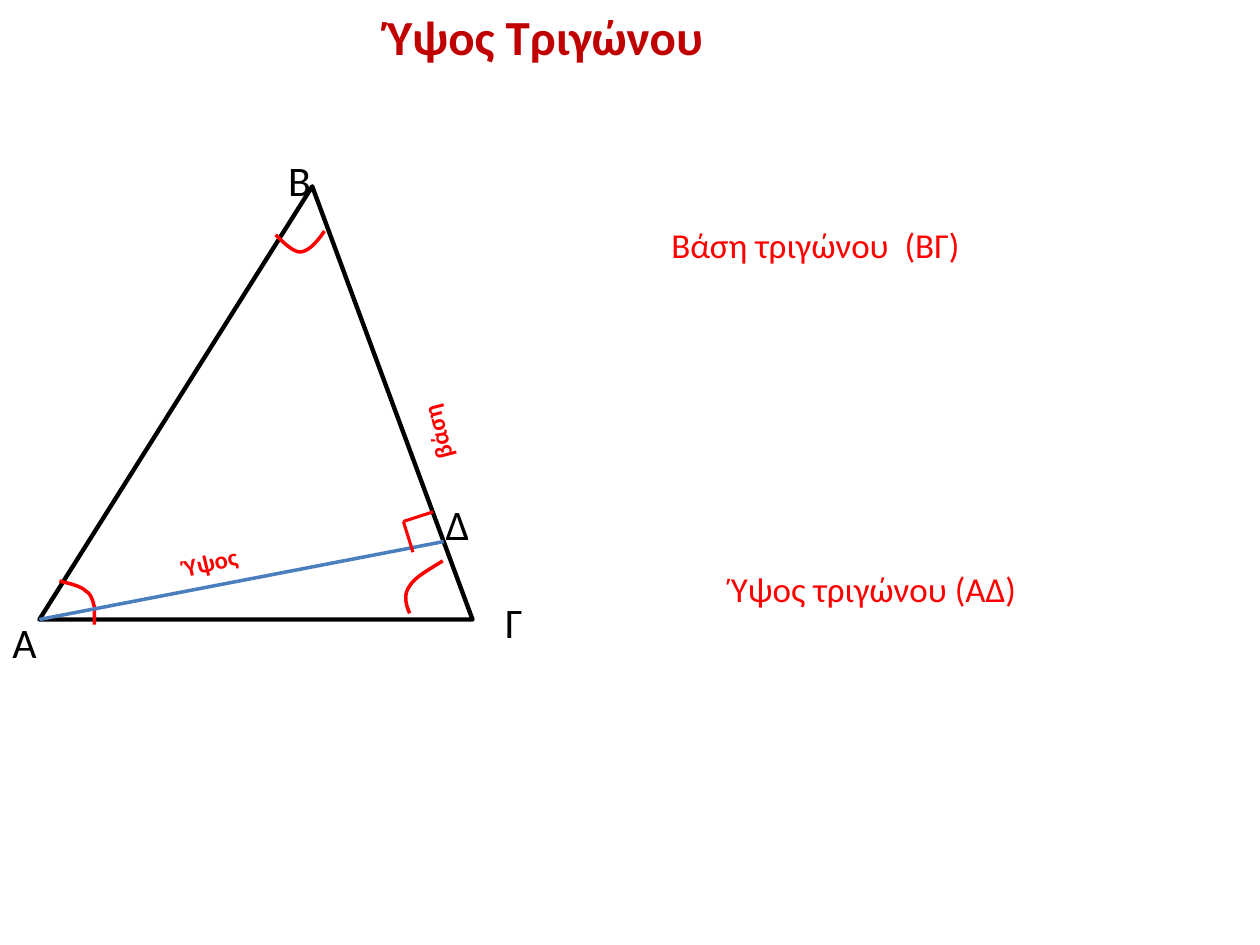
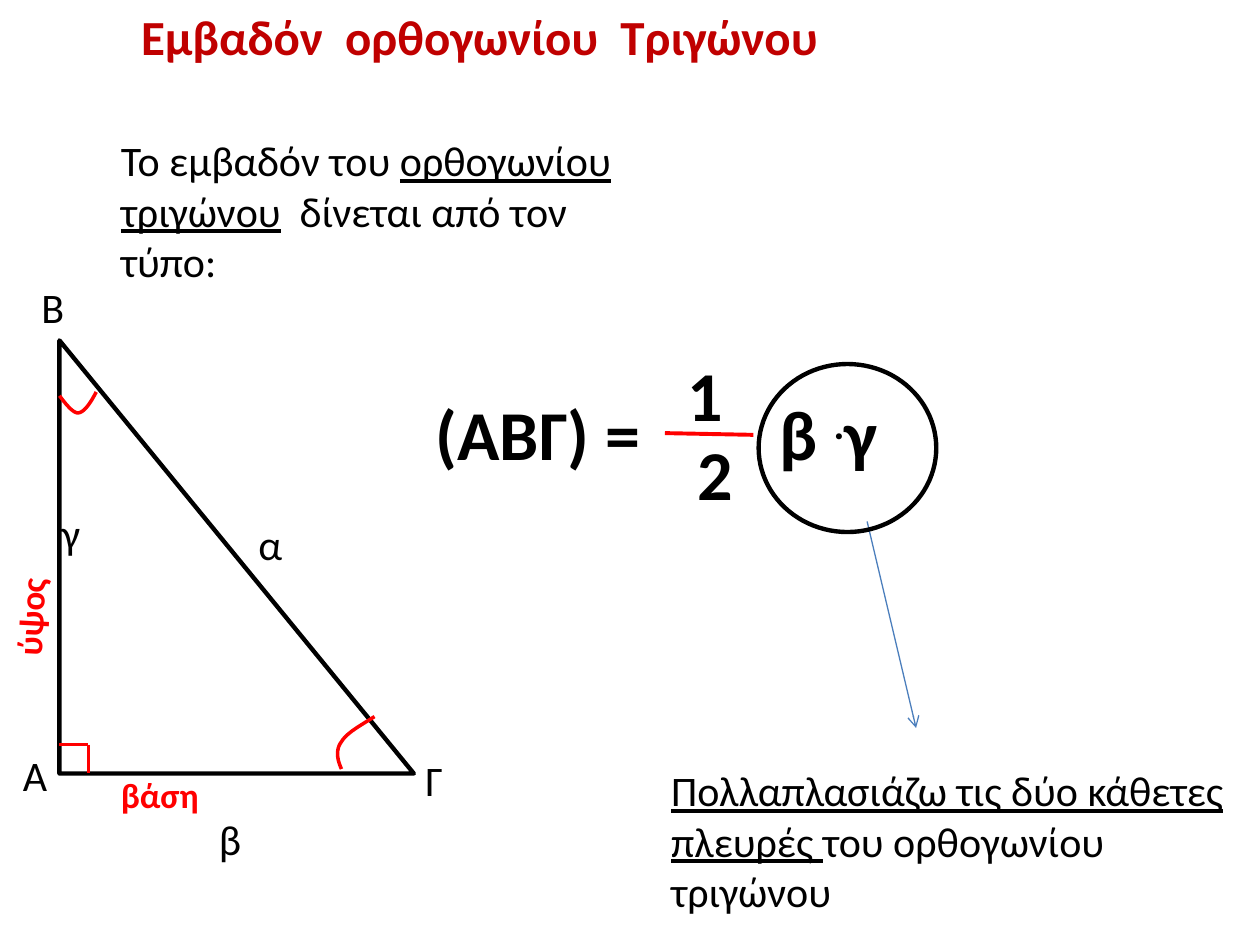
from lxml.etree import SubElement
from pptx import Presentation
from pptx.dml.color import RGBColor
from pptx.enum.shapes import MSO_CONNECTOR, MSO_SHAPE
from pptx.enum.text import MSO_AUTO_SIZE
from pptx.oxml.ns import qn
from pptx.util import Pt

COLORS = {"ink": "000000", "red": "FF0000", "title": "C00000", "blue": "4B7EBC"}
FONT = "Calibri"
APEX_ARC = [(0, 0.18), (0.18, 0.59), (0.36, 1), (0.51, 1),
            (0.69, 0.95), (0.85, 0.5), (1, 0)]
RIGHT_ARC = [(0.16, 1), (0.06, 0.83), (0, 0.64), (0.16, 0.48),
             (0.29, 0.31), (0.65, 0.17), (1, 0)]
LEFT_ARC = [(0, 0), (0.28, 0.06), (0.6, 0.11), (0.75, 0.23), (0.93, 0.31),
            (0.96, 0.49), (1, 0.6), (1, 0.74), (1, 0.89), (1, 1)]


def color(name):
    return RGBColor.from_string(COLORS[name])


def style_line(shape, name, weight):
    shape.line.color.rgb = color(name)
    shape.line.width = Pt(weight)


def add_text(slide, left, top, width, runs, size=24, ink="ink", bold=False,
             rotation=0, lines=1, wrap=True):
    height = 1.2 * size * lines + 7.2
    box = slide.shapes.add_textbox(Pt(left), Pt(top), Pt(width), Pt(height))
    box.rotation = rotation
    frame = box.text_frame
    frame.word_wrap = wrap
    frame.auto_size = MSO_AUTO_SIZE.SHAPE_TO_FIT_TEXT
    paragraph = frame.paragraphs[0]
    paragraph.font.name = FONT
    paragraph.font.size = Pt(size)
    paragraph.font.bold = bold
    paragraph.font.color.rgb = color(ink)
    for text, mark in [(runs, None)] if isinstance(runs, str) else runs:
        run = paragraph.add_run()
        run.text = text
        if mark == "underline":
            run.font.underline = True
        elif mark == "raised":
            run.font._element.set("baseline", "30000")


def add_title(slide, left, width, text):
    add_text(slide, left, 0, width, text, size=28, ink="title", bold=True)


def add_vertices(slide, vertices):
    for letter, (left, top) in vertices.items():
        add_text(slide, left, top, 39.6, letter)


def add_outline(slide, preset, left, top, width, height, apex=None):
    shape = slide.shapes.add_shape(preset, Pt(left), Pt(top), Pt(width), Pt(height))
    shape.shadow.inherit = False
    shape.fill.background()
    style_line(shape, "ink", 2.5)
    if apex is not None:
        shape.adjustments[0] = apex


def add_line(slide, start, end, ink, weight, arrow=False):
    line = slide.shapes.add_connector(
        MSO_CONNECTOR.STRAIGHT, *(Pt(value) for value in (*start, *end)))
    style_line(line, ink, weight)
    if arrow:
        SubElement(line.line._get_or_add_ln(), qn("a:tailEnd"), type="arrow")
    SubElement(line._element.spPr, qn("a:effectLst"))


def add_right_angle(slide, first, corner, last, weight):
    for end in (first, last):
        add_line(slide, corner, end, "red", weight)


def curve_points(controls, steps=12):
    points = [controls[0]]
    for index in range(0, len(controls) - 1, 3):
        segment = controls[index:index + 4]
        for step in range(1, steps + 1):
            t = step / steps
            weights = ((1 - t) ** 3, 3 * t * (1 - t) ** 2, 3 * t * t * (1 - t), t ** 3)
            points.append(tuple(
                sum(weight * point[axis] for weight, point in zip(weights, segment))
                for axis in (0, 1)))
    return points


def add_angle_arc(slide, controls, left, top, width, height):
    points = [(Pt(left + x * width), Pt(top + y * height))
              for x, y in curve_points(controls)]
    builder = slide.shapes.build_freeform(*points[0])
    builder.add_line_segments(points[1:], close=False)
    arc = builder.convert_to_shape()
    arc.shadow.inherit = False
    arc.fill.background()
    style_line(arc, "red", 2)


def build_height_slide(slide):
    add_outline(slide, MSO_SHAPE.ISOSCELES_TRIANGLE, 22.5, 106.5, 247.5, 247.5, apex=0.63)
    add_vertices(slide, {"Α": (0, 348.5), "Β": (157.5, 84.5),
                         "Γ": (281.5, 337.5), "Δ": (247.5, 281.5)})
    add_angle_arc(slide, APEX_ARC, 157.5, 132, 28, 12)
    add_angle_arc(slide, LEFT_ARC, 34, 332, 20, 25)
    add_angle_arc(slide, RIGHT_ARC, 230.5, 320.5, 22.5, 30)
    add_line(slide, (22.5, 354), (253.5, 309.5), "blue", 2)
    add_right_angle(slide, (236, 315.5), (230.5, 298), (247.5, 292.5), 1.75)
    add_text(slide, 410.5, 320.5, 286.5, "Ύψος τριγώνου (ΑΔ)", size=20, ink="red")
    add_text(slide, 376.5, 124, 286.5, "Βάση τριγώνου  (ΒΓ)", size=20, ink="red")
    add_text(slide, 97, 303, 95, "Ύψος", size=14, ink="red", bold=True, rotation=346.3)
    add_text(slide, 196, 211, 95, "βάση", size=14, ink="red", bold=True, rotation=255.4)
    add_title(slide, 214, 360, "Ύψος Τριγώνου")


def build_area_slide(slide):
    add_title(slide, 73.5, 500, "Εμβαδόν  ορθογωνίου  Τριγώνου")
    add_text(slide, 62, 73.5, 315.5, [
        ("Το εμβαδόν του ", None), ("ορθογωνίου τριγώνου", "underline"),
        ("  δίνεται από τον τύπο:", None)], lines=3)

    add_line(slide, (380, 247.5), (430.5, 248.5), "red", 2.25)
    formula = [("1", 386, 197.5, 39.5), ("2", 391.5, 242.5, 35.5),
               ("(ΑΒΓ) =", 242, 219.5, 132.5),
               ([("β ", None), (".", "raised"), ("γ", None)], 438.5, 219.5, 72)]
    for runs, left, top, width in formula:
        add_text(slide, left, top, width, runs, size=40, bold=True, wrap=False)
    add_line(slide, (495.5, 298), (523.5, 416), "blue", 0.75, arrow=True)

    add_outline(slide, MSO_SHAPE.ISOSCELES_TRIANGLE, 34, 194.5, 202.5, 247.5, apex=0)
    add_vertices(slide, {"Α": (6, 425), "Β": (16.5, 157.5), "Γ": (236, 427.5)})
    add_angle_arc(slide, APEX_ARC, 34, 224, 21, 12)
    add_angle_arc(slide, RIGHT_ARC, 191.5, 409.5, 22.5, 30)
    add_right_angle(slide, (50.5, 442), (50.5, 425.5), (34, 425.5), 2)
    for letter, left, top in (("α", 140.5, 292.5), ("β", 118, 461.5), ("γ", 28, 286.5)):
        add_text(slide, left, top, 27.5, letter)
    add_text(slide, -29.5, 319, 95, "ύψος", size=20, ink="red", bold=True, rotation=272.9)
    add_text(slide, 62, 438.5, 95, "βάση", size=20, ink="red", bold=True)

    add_outline(slide, MSO_SHAPE.OVAL, 433.5, 208, 101.5, 96)
    add_text(slide, 376.5, 433.5, 343.5, [
        ("Πολλαπλασιάζω τις δύο κάθετες πλευρές ", "underline"),
        ("του ορθογωνίου τριγώνου", None)], lines=3)


def main():
    presentation = Presentation()
    presentation.slide_width = Pt(720)
    presentation.slide_height = Pt(540)
    for build in (build_height_slide, build_area_slide):
        build(presentation.slides.add_slide(presentation.slide_layouts[6]))
    presentation.save("out.pptx")


if __name__ == "__main__":
    main()
